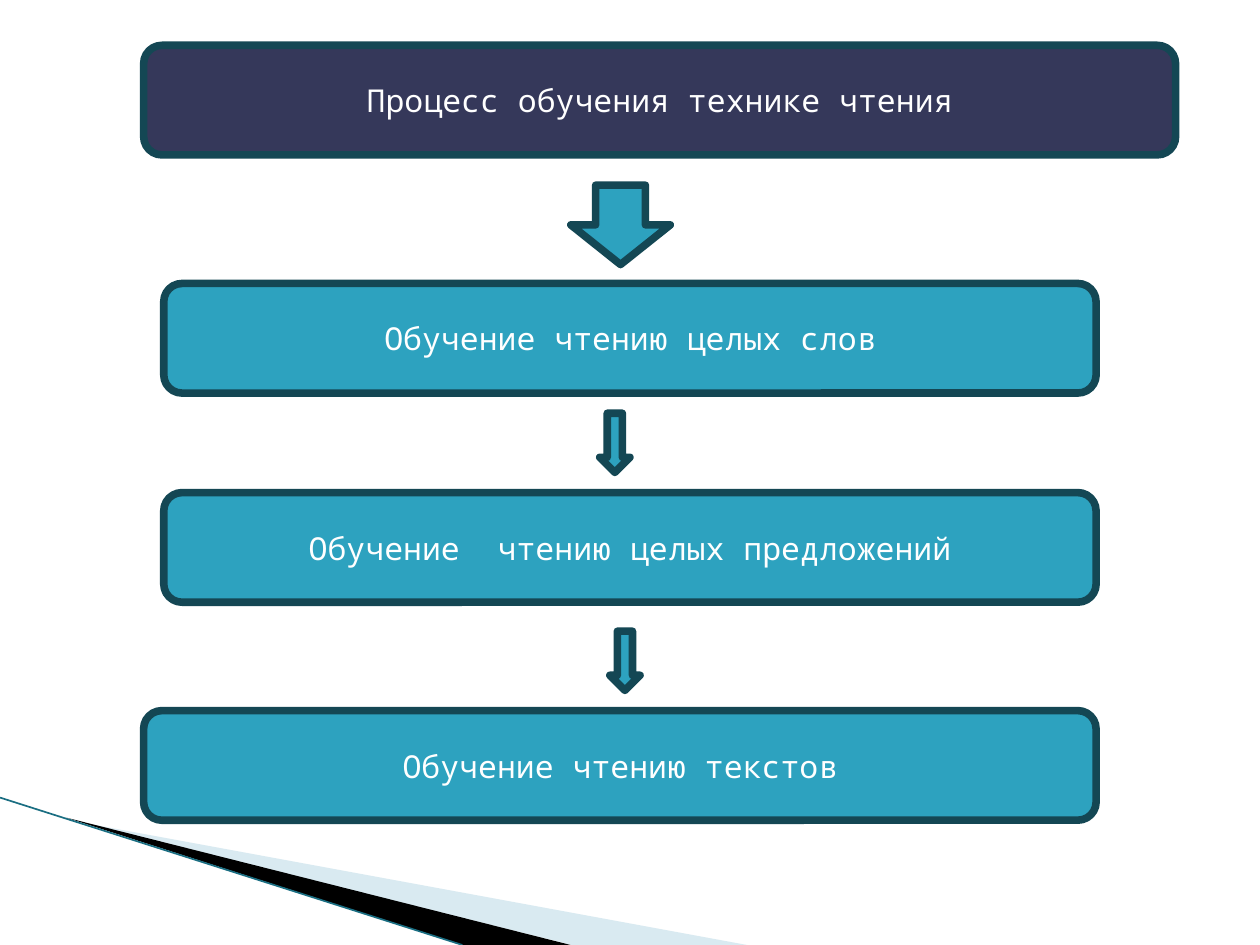
from dataclasses import dataclass

from lxml.etree import SubElement
from pptx import Presentation
from pptx.dml.color import RGBColor
from pptx.enum.shapes import MSO_CONNECTOR, MSO_SHAPE
from pptx.enum.text import MSO_ANCHOR, PP_ALIGN
from pptx.oxml.ns import qn
from pptx.util import Inches, Pt


@dataclass(frozen=True)
class Theme:
    title_fill: str = "35385A"
    step_fill: str = "2DA2BF"
    outline: str = "144754"
    text: str = "FFFFFF"
    pale_wedge: str = "A0CBDC"
    dark_wedge: str = "000000"
    edge_line: str = "1A6E82"
    font: str = "Noto Sans Mono"
    text_size: float = 18
    outline_width: float = 4.33
    edge_width: float = 0.95


class SlideBuilder:
    def __init__(self, slide, theme):
        self.slide = slide
        self.theme = theme

    def shape(self, kind, left, top, width, height, fill):
        shape = self.slide.shapes.add_shape(
            kind, Inches(left), Inches(top), Inches(width), Inches(height))
        shape.shadow.inherit = False
        shape.fill.solid()
        shape.fill.fore_color.rgb = RGBColor.from_string(fill)
        shape.line.color.rgb = RGBColor.from_string(self.theme.outline)
        shape.line.width = Pt(self.theme.outline_width)
        return shape

    def box(self, kind, left, top, width, text, fill):
        shape = self.shape(kind, left, top, width, 0.87, fill)
        frame = shape.text_frame
        frame.word_wrap = True
        frame.vertical_anchor = MSO_ANCHOR.MIDDLE
        paragraph = frame.paragraphs[0]
        paragraph.text = text
        paragraph.alignment = PP_ALIGN.CENTER
        paragraph.font.name = self.theme.font
        paragraph.font.size = Pt(self.theme.text_size)
        paragraph.font.color.rgb = RGBColor.from_string(self.theme.text)

    def arrow(self, left, top, width, height):
        self.shape(MSO_SHAPE.DOWN_ARROW, left, top, width, height,
                   self.theme.step_fill)

    def wedge(self, points, fill, opacity=100):
        corners = [(Inches(x), Inches(y)) for x, y in points]
        builder = self.slide.shapes.build_freeform(*corners[0])
        builder.add_line_segments(corners[1:], close=True)
        shape = builder.convert_to_shape()
        shape.shadow.inherit = False
        shape.line.fill.background()
        shape.fill.solid()
        shape.fill.fore_color.rgb = RGBColor.from_string(fill)
        if opacity < 100:
            color = shape.fill._xPr.find(qn("a:solidFill"))[0]
            SubElement(color, qn("a:alpha")).set("val", str(opacity * 1000))

    def line(self, start, end):
        connector = self.slide.shapes.add_connector(
            MSO_CONNECTOR.STRAIGHT, *(Inches(value) for value in start + end))
        connector.line.color.rgb = RGBColor.from_string(self.theme.edge_line)
        connector.line.width = Pt(self.theme.edge_width)
        SubElement(connector._element.spPr, qn("a:effectLst"))


def main():
    presentation = Presentation()
    presentation.slide_width = Inches(10)
    presentation.slide_height = Inches(7.5)
    slide = presentation.slides.add_slide(presentation.slide_layouts[6])
    theme = Theme()
    builder = SlideBuilder(slide, theme)

    # Corner decoration
    builder.wedge([(0.55, 6.51), (5.93, 7.5), (4.54, 7.5)],
                  theme.pale_wedge, opacity=40)
    builder.wedge([(0.53, 6.49), (4.53, 7.5), (3.67, 7.5)], theme.dark_wedge)
    builder.line((0, 6.33), (3.67, 7.5))

    # Title and teaching steps
    rounded = MSO_SHAPE.ROUNDED_RECTANGLE
    process = MSO_SHAPE.FLOWCHART_ALTERNATE_PROCESS
    boxes = [
        (process, 1.14, 0.36, 8.19, "Процесс обучения технике чтения", theme.title_fill),
        (rounded, 1.3, 2.25, 7.4, "Обучение чтению целых слов", theme.step_fill),
        (process, 1.3, 3.91, 7.4, "Обучение  чтению целых предложений", theme.step_fill),
        (process, 1.14, 5.64, 7.56, "Обучение чтению текстов", theme.step_fill),
    ]
    for box in boxes:
        builder.box(*box)

    # Arrows between the steps
    builder.arrow(4.53, 1.47, 0.79, 0.63)
    for left, top in [(4.76, 3.28), (4.84, 5.01)]:
        builder.arrow(left, top, 0.24, 0.47)

    presentation.save("out.pptx")


if __name__ == "__main__":
    main()
